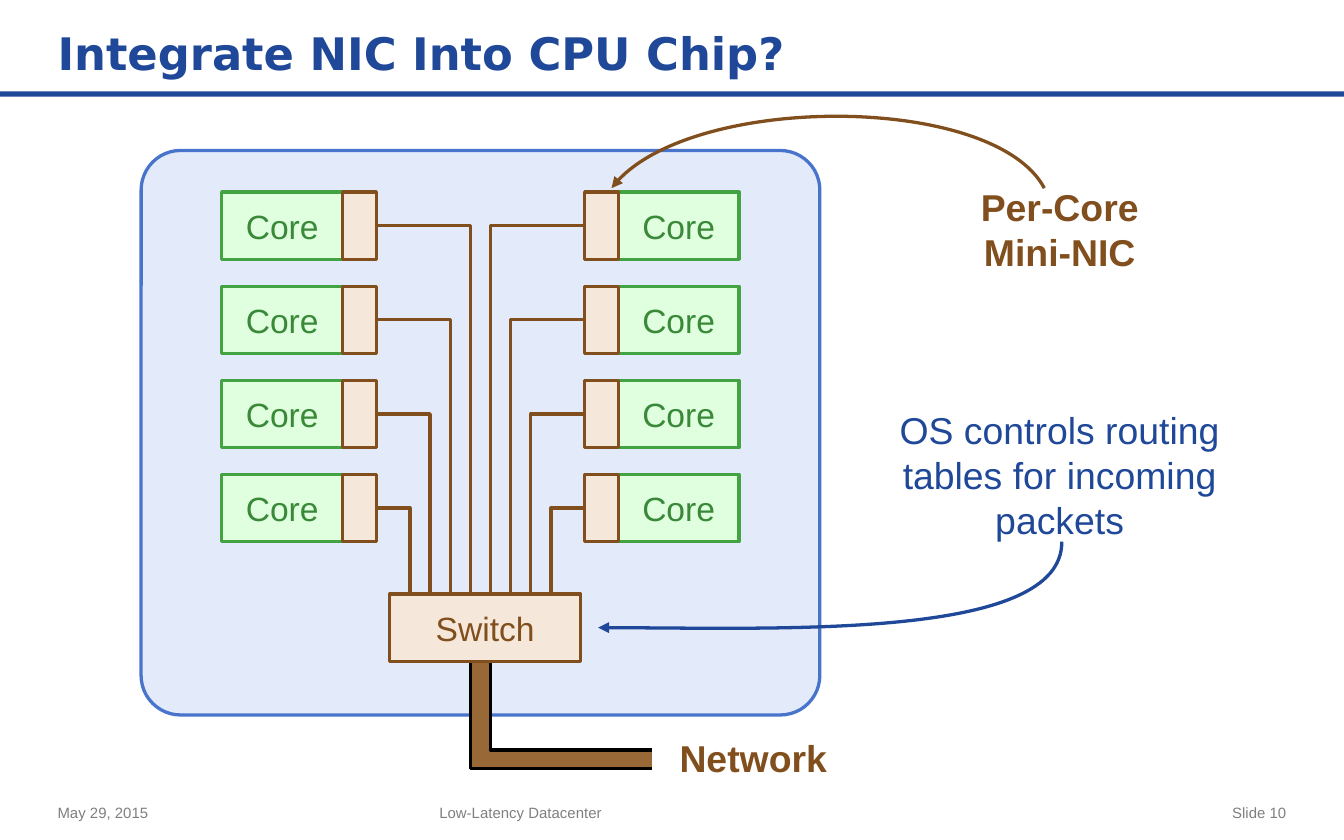
from dataclasses import dataclass
from typing import NamedTuple, Optional

from lxml.etree import SubElement
from pptx import Presentation
from pptx.dml.color import RGBColor
from pptx.enum.shapes import MSO_SHAPE
from pptx.enum.text import MSO_ANCHOR, PP_ALIGN
from pptx.oxml.ns import qn
from pptx.util import Inches, Pt

NAVY = RGBColor(0x1F, 0x48, 0x99)
BLUE = RGBColor(0x49, 0x74, 0xCB)
PALE_BLUE = RGBColor(0xE3, 0xEA, 0xF9)
GREEN = RGBColor(0x43, 0xA3, 0x43)
DARK_GREEN = RGBColor(0x39, 0x89, 0x39)
PALE_GREEN = RGBColor(0xDF, 0xFF, 0xDF)
BROWN = RGBColor(0x81, 0x4F, 0x1D)
CABLE_BROWN = RGBColor(0x99, 0x68, 0x37)
PALE_BROWN = RGBColor(0xF5, 0xE7, 0xD9)
GRAY = RGBColor(0x7F, 0x7F, 0x7F)
BLACK = RGBColor(0, 0, 0)

LINE_WIDTH = Pt(1.75)
CURVE_STEPS = 40

ROWS, ROW_TOP, ROW_PITCH, ROW_HEIGHT = 4, 1.43, 0.7, 0.5
CORE_WIDTH, NIC_WIDTH = 0.9, 0.25
SWITCH_TOP, SWITCH_BOTTOM = 4.42, 4.92
CABLE_LEFT, CABLE_RIGHT, CABLE_END = 3.5, 3.65, 4.85
CABLE_INNER_Y, CABLE_OUTER_Y = 5.58, 5.72
TRACE_GAP = 0.15


class Point(NamedTuple):
    x: float
    y: float


class Box(NamedTuple):
    left: float
    top: float
    width: float
    height: float


@dataclass
class Label:
    box: Box
    lines: list[str]
    size: float
    color: RGBColor
    bold: bool = False
    font: str = "Arial"
    align: PP_ALIGN = PP_ALIGN.LEFT
    anchor: MSO_ANCHOR = MSO_ANCHOR.MIDDLE
    wrap: bool = True


@dataclass
class Side:
    core_left: float
    nic_left: float
    nic_edge: float
    trace_x: float
    direction: int


@dataclass
class Curve:
    points: tuple[Point, Point, Point, Point]
    color: RGBColor

    def at(self, t: float) -> Point:
        weights = ((1 - t) ** 3, 3 * t * (1 - t) ** 2, 3 * t * t * (1 - t), t ** 3)
        return Point(sum(w * p.x for w, p in zip(weights, self.points)),
                     sum(w * p.y for w, p in zip(weights, self.points)))


SIDES = [
    Side(1.65, 2.55, 2.8, CABLE_LEFT, -1),
    Side(4.6, 4.35, 4.35, CABLE_RIGHT, 1),
]

LABELS = [
    Label(Box(0.33, 0.11, 9.33, 0.56), ["Integrate NIC Into CPU Chip?"], 24, NAVY,
          bold=True, font="DejaVu Sans"),
    Label(Box(0.33, 5.91, 2.5, 0.27), ["May 29, 2015"], 8, GRAY),
    Label(Box(3.17, 5.91, 3.75, 0.27), ["Low-Latency Datacenter"], 8, GRAY),
    Label(Box(7.17, 5.91, 2.5, 0.27), ["Slide 10"], 8, GRAY, align=PP_ALIGN.RIGHT),
    Label(Box(4.95, 5.42, 1.31, 0.44), ["Network"], 20, BROWN, bold=True,
          align=PP_ALIGN.CENTER, anchor=MSO_ANCHOR.TOP, wrap=False),
    Label(Box(7.19, 1.32, 1.39, 0.77), ["Per-Core", "Mini-NIC"], 20, BROWN, bold=True,
          align=PP_ALIGN.CENTER, anchor=MSO_ANCHOR.TOP, wrap=False),
    Label(Box(6.55, 2.98, 2.67, 1.11), ["OS controls routing tables for incoming packets"],
          20, NAVY, align=PP_ALIGN.CENTER, anchor=MSO_ANCHOR.TOP),
]

CURVES = [
    Curve((Point(7.9, 4.03), Point(7.91, 4.76), Point(5.76, 4.67), Point(4.45, 4.67)), NAVY),
    Curve((Point(7.77, 1.4), Point(7.4, 0.7), Point(5.08, 0.69), Point(4.55, 1.4)), BROWN),
]


def style(s, fill: Optional[RGBColor], line: Optional[RGBColor]) -> None:
    s.shadow.inherit = False
    for part, color in ((s.fill, fill), (s.line.fill, line)):
        if color is None:
            part.background()
        else:
            part.solid()
            part.fore_color.rgb = color
    if line is not None:
        s.line.width = LINE_WIDTH


def write(tf, label: Label) -> None:
    tf.word_wrap = label.wrap
    tf.vertical_anchor = label.anchor
    formats = {"name": label.font, "size": Pt(label.size), "bold": label.bold}
    for i, text in enumerate(label.lines):
        p = tf.add_paragraph() if i else tf.paragraphs[0]
        p.alignment = label.align
        r = p.add_run()
        r.text = text
        for name, value in formats.items():
            setattr(r.font, name, value)
        r.font.color.rgb = label.color


def add_label(sp, label: Label) -> None:
    write(sp.add_textbox(*map(Inches, label.box)).text_frame, label)


def add_box(sp, box: Box, fill: RGBColor, line: Optional[RGBColor] = None,
            text: str = "", color: RGBColor = BROWN, kind: MSO_SHAPE = MSO_SHAPE.RECTANGLE):
    s = sp.add_shape(kind, *map(Inches, box))
    style(s, fill, line)
    if text:
        tf = s.text_frame
        for side in ("left", "top", "right", "bottom"):
            setattr(tf, f"margin_{side}", 0)
        write(tf, Label(box, [text], 18, color, align=PP_ALIGN.CENTER, wrap=False))
    return s


def add_outline(sp, points: list[Point], fill: Optional[RGBColor] = None,
                line: Optional[RGBColor] = None, close: bool = False):
    corners = [(Inches(p.x), Inches(p.y)) for p in points]
    builder = sp.build_freeform(*corners[0])
    builder.add_line_segments(corners[1:], close=close)
    s = builder.convert_to_shape()
    style(s, fill, line)
    return s


def add_curve(sp, curve: Curve) -> None:
    samples = [curve.at(i / CURVE_STEPS) for i in range(CURVE_STEPS + 1)]
    s = add_outline(sp, samples, line=curve.color)
    outline = s._element.xpath(".//a:path")[0]
    for segment in outline.findall(qn("a:lnTo")):
        outline.remove(segment)
    bezier = SubElement(outline, qn("a:cubicBezTo"))
    for p in curve.points[1:]:
        SubElement(bezier, qn("a:pt"), x=str(Inches(p.x) - s.left), y=str(Inches(p.y) - s.top))
    SubElement(s.line._get_or_add_ln(), qn("a:tailEnd"), type="triangle")


def add_core(sp, side: Side, row: int) -> None:
    top = ROW_TOP + row * ROW_PITCH
    middle = top + ROW_HEIGHT / 2
    x = side.trace_x + side.direction * row * TRACE_GAP
    add_box(sp, Box(side.core_left, top, CORE_WIDTH, ROW_HEIGHT), PALE_GREEN, GREEN,
            "Core", DARK_GREEN)
    add_outline(sp, [Point(x, SWITCH_TOP), Point(x, middle), Point(side.nic_edge, middle)],
                line=BROWN)
    add_box(sp, Box(side.nic_left, top, NIC_WIDTH, ROW_HEIGHT), PALE_BROWN, BROWN)


def add_cable(sp) -> None:
    outer = [Point(CABLE_LEFT, SWITCH_BOTTOM), Point(CABLE_LEFT, CABLE_OUTER_Y),
             Point(CABLE_END, CABLE_OUTER_Y)]
    inner = [Point(CABLE_RIGHT, SWITCH_BOTTOM), Point(CABLE_RIGHT, CABLE_INNER_Y),
             Point(CABLE_END, CABLE_INNER_Y)]
    add_outline(sp, outer + inner[::-1], fill=CABLE_BROWN, close=True)
    for edge in (outer, inner):
        add_outline(sp, edge, line=BLACK)


def main() -> None:
    prs = Presentation()
    prs.slide_width, prs.slide_height = Inches(10), Inches(6.25)
    sp = prs.slides.add_slide(prs.slide_layouts[6]).shapes
    add_box(sp, Box(0, 0.68, 10, 0.04), NAVY)
    chip = add_box(sp, Box(1.05, 1.12, 5.05, 4.2), PALE_BLUE, BLUE,
                   kind=MSO_SHAPE.ROUNDED_RECTANGLE)
    chip.adjustments[0] = 0.07
    add_cable(sp)
    for side in SIDES:
        for row in range(ROWS):
            add_core(sp, side, row)
    add_box(sp, Box(2.9, SWITCH_TOP, 1.42, 0.5), PALE_BROWN, BROWN, "Switch")
    for label in LABELS:
        add_label(sp, label)
    for curve in CURVES:
        add_curve(sp, curve)
    prs.save("out.pptx")


if __name__ == "__main__":
    main()
